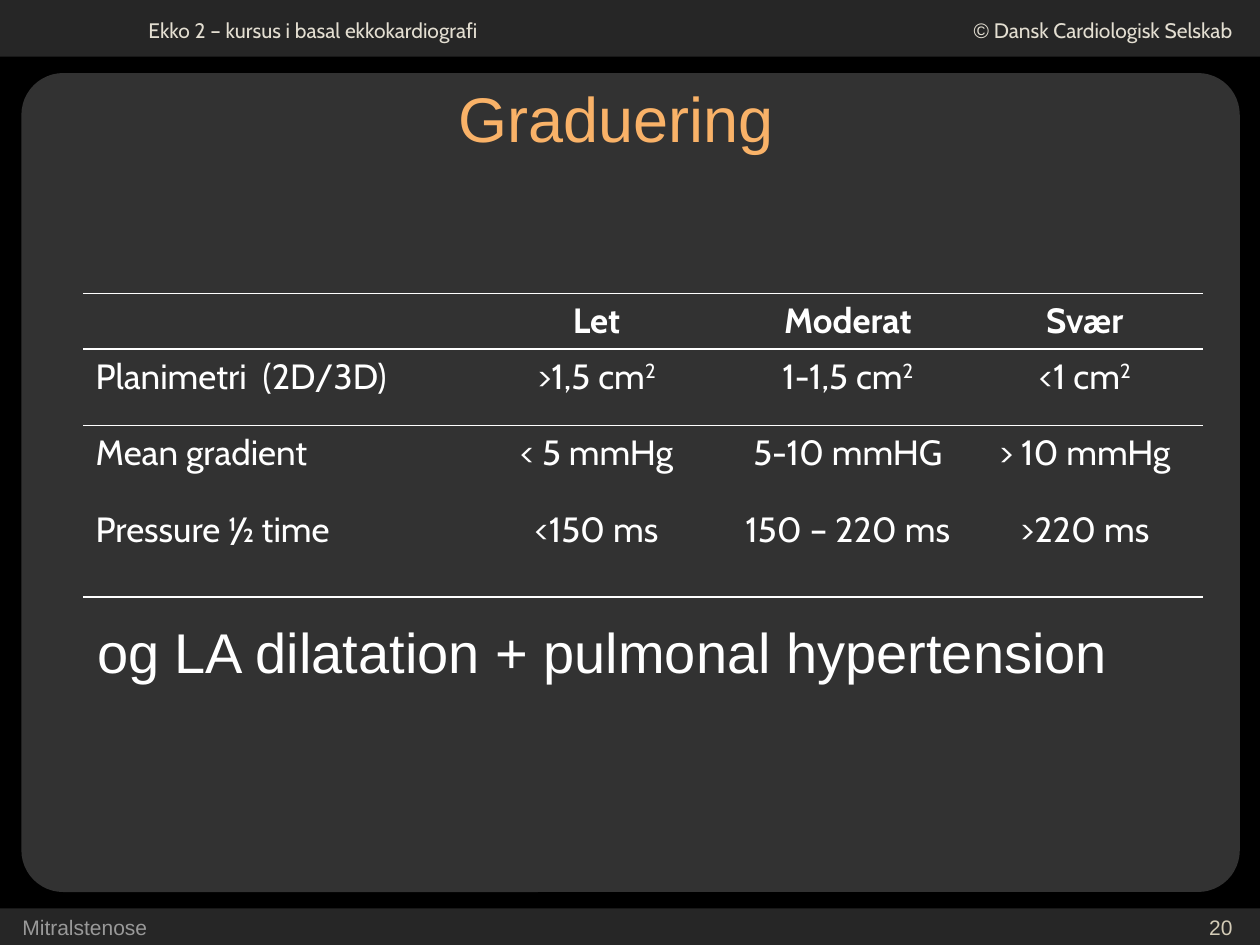
from lxml import etree
from pptx import Presentation
from pptx.dml.color import RGBColor
from pptx.enum.shapes import MSO_SHAPE
from pptx.enum.text import MSO_ANCHOR, PP_ALIGN
from pptx.oxml.ns import qn
from pptx.util import Inches, Pt

RECT, ROUND = MSO_SHAPE.RECTANGLE, MSO_SHAPE.ROUNDED_RECTANGLE
LEFT, CENTER, RIGHT = PP_ALIGN.LEFT, PP_ALIGN.CENTER, PP_ALIGN.RIGHT
TOP, MIDDLE = MSO_ANCHOR.TOP, MSO_ANCHOR.MIDDLE

WHITE, BAR, PANEL = "FFFFFF", "262626", "323232"
CREAM, ORANGE, SAND, GREY = "E3DED1", "F9B268", "D3CBB6", "999999"


def rgb(value):
    return RGBColor.from_string(value)


def add_run(p, text, size=12, font="Arial", color=WHITE, bold=False, raised=False):
    r = p.add_run()
    r.text = text
    f = r.font
    f.size, f.name, f.bold = Pt(size), font, bold
    f.color.rgb = rgb(color)
    if raised:
        r._r.get_or_add_rPr().set("baseline", "30000")


def set_borders(cell, top, bottom):
    """Draw horizontal borders of the given point widths; 0 means none."""
    tcPr = cell._tc.get_or_add_tcPr()
    sides = (("a:lnL", 0), ("a:lnR", 0), ("a:lnT", top), ("a:lnB", bottom))
    for i, (tag, width) in enumerate(sides):
        ln = etree.Element(qn(tag), w=str(int(Pt(width))))
        if width:
            fill = etree.SubElement(ln, qn("a:solidFill"))
            etree.SubElement(fill, qn("a:srgbClr"), val=WHITE)
        else:
            etree.SubElement(ln, qn("a:noFill"))
        tcPr.insert(i, ln)


class Deck:
    def __init__(self):
        self.prs = Presentation()
        self.prs.slide_width, self.prs.slide_height = Inches(10), Inches(7.5)
        self.s = self.prs.slides.add_slide(self.prs.slide_layouts[1])
        bg = self.s.background.fill
        bg.solid()
        bg.fore_color.rgb = rgb("000000")

    def box(self, kind, x, y, w, h, color, radius=None):
        sp = self.s.shapes.add_shape(kind, *map(Inches, (x, y, w, h)))
        sp.shadow.inherit = False
        sp.fill.solid()
        sp.fill.fore_color.rgb = rgb(color)
        sp.line.fill.background()
        if radius is not None:
            sp.adjustments[0] = radius

    def text(self, x, y, w, h, runs, align=LEFT, **style):
        sp = self.s.shapes.add_textbox(*map(Inches, (x, y, w, h)))
        tf = sp.text_frame
        tf.word_wrap = True
        p = tf.paragraphs[0]
        p.alignment = align
        for text, font in runs:
            add_run(p, text, font=font, **style)

    def placeholder(self, sp, x, y, w, h, text, align, anchor, indent=0, **style):
        sp.left, sp.top, sp.width, sp.height = map(Inches, (x, y, w, h))
        self.s.shapes._spTree.append(sp._element)  # in front of the backdrop
        tf = sp.text_frame
        tf.word_wrap, tf.vertical_anchor = True, anchor
        p = tf.paragraphs[0]
        pPr = p._p.get_or_add_pPr()
        pPr.set("marL", str(Inches(indent)))
        pPr.set("indent", str(-Inches(indent)))
        etree.SubElement(pPr, qn("a:buNone"))
        p.alignment, p.space_before = align, Pt(0)
        add_run(p, text, **style)

    def table(self, x, y, cols, heights, rows, rules):
        """rules holds the line widths above, between and below the rows."""
        frame = self.s.shapes.add_table(
            len(rows), len(cols), Inches(x), Inches(y),
            Inches(sum(cols)), Inches(sum(heights)))
        table = frame.table
        table.first_row = table.horz_banding = False
        for col, width in zip(table.columns, cols):
            col.width = Inches(width)
        for i, row in enumerate(rows):
            table.rows[i].height = Inches(heights[i])
            for j, text in enumerate(row):
                cell = table.cell(i, j)
                cell.fill.background()
                set_borders(cell, rules[i], rules[i + 1])
                p = cell.text_frame.paragraphs[0]
                p.alignment = CENTER if j else LEFT
                base, caret, power = text.partition("^")
                if base:
                    add_run(p, base, size=20, font="Cabin", bold=i == 0)
                if caret:
                    add_run(p, power, size=20, font="Cabin", raised=True)


def main():
    deck = Deck()
    shapes = deck.s.shapes
    title, body = shapes.title, deck.s.placeholders[1]

    # Backdrop: footer bar, header bar and content panel
    deck.box(RECT, 0, 7.21, 10, 0.29, BAR)
    deck.box(RECT, 0, 0, 10, 0.45, BAR)
    deck.box(ROUND, 0.17, 0.58, 9.67, 6.5, PANEL, radius=0.051)

    # Header
    deck.text(1.08, 0.09, 3.75, 0.3,
              [("Ekko 2 – kursus i basal ekkokardiografi", "Cabin")], color=CREAM)
    deck.text(6.89, 0.09, 2.99, 0.3,
              [("©", "Arial"), (" Dansk Cardiologisk Selskab", "Cabin")],
              RIGHT, color=CREAM)

    # Title
    deck.placeholder(title, 0.39, 0.31, 9, 1.25, "Graduering", CENTER, MIDDLE,
                     size=36, color=ORANGE)

    # Grading table; ^ marks a superscript
    deck.table(
        0.66, 2.33, [3.02, 2.11, 1.88, 1.88], [0.43, 0.61, 0.61, 0.75],
        [["", "Let", "Moderat", "Svær"],
         ["Planimetri  (2D/3D)", ">1,5 cm^2", "1-1,5 cm^2", "<1 cm^2"],
         ["Mean gradient", "< 5 mmHg", "5-10 mmHG", "> 10 mmHg"],
         ["Pressure ½ time", "<150 ms", "150 – 220 ms", ">220 ms"]],
        rules=[1, 1, 0.5, 0, 1])

    # Remark below the table
    deck.placeholder(body, 0.67, 4.85, 9.3, 2.34,
                     "og LA dilatation + pulmonal hypertension", LEFT, TOP,
                     indent=0.32, size=32)

    # Footer
    deck.text(7.55, 7.21, 2.33, 0.25, [("20", "Arial")], RIGHT, color=SAND)
    deck.text(0.08, 7.21, 3.17, 0.25, [("Mitralstenose", "Arial")], color=GREY)

    deck.prs.save("out.pptx")


if __name__ == "__main__":
    main()
